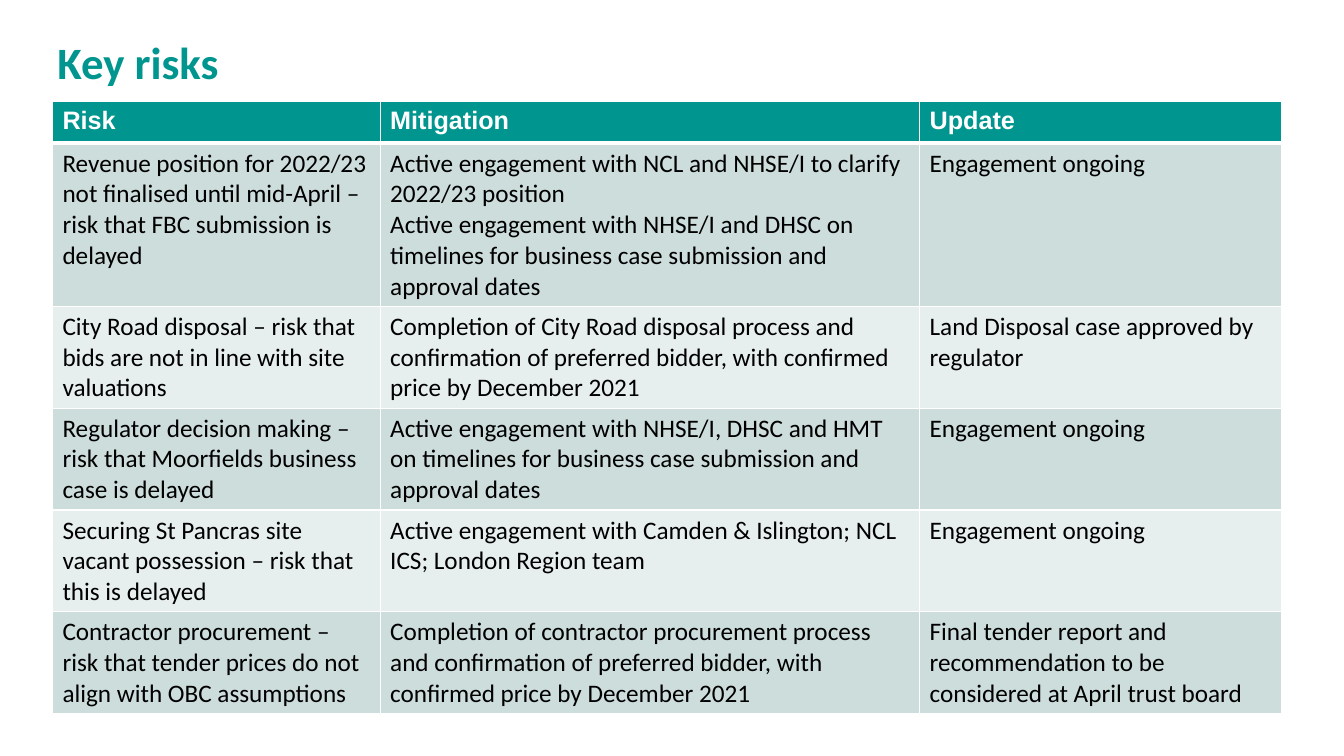
from lxml import etree
from pptx import Presentation
from pptx.dml.color import RGBColor
from pptx.enum.text import MSO_ANCHOR
from pptx.oxml.ns import qn
from pptx.util import Inches, Pt

MIDDLE = MSO_ANCHOR.MIDDLE
WIDTH, HEIGHT = 13.33, 7.5

HEADINGS = ["Risk", "Mitigation", "Update"]
# One row per risk; each cell is a list of paragraphs
RISKS = [
    [["Revenue position for 2022/23 not finalised until mid-April – risk that FBC submission is delayed"],
     ["Active engagement with NCL and NHSE/I to clarify 2022/23 position",
      "Active engagement with NHSE/I and DHSC on timelines for business case submission and approval dates"],
     ["Engagement ongoing"]],
    [["City Road disposal – risk that bids are not in line with site valuations"],
     ["Completion of City Road disposal process and confirmation of preferred bidder, "
      "with confirmed price by December 2021"],
     ["Land Disposal case approved by regulator"]],
    [["Regulator decision making – risk that Moorfields business case is delayed"],
     ["Active engagement with NHSE/I, DHSC and HMT on timelines for business case submission and approval dates"],
     ["Engagement ongoing"]],
    [["Securing St Pancras site vacant possession – risk that this is delayed"],
     ["Active engagement with Camden & Islington; NCL ICS; London Region team"],
     ["Engagement ongoing"]],
    [["Contractor procurement – risk that tender prices do not align with OBC assumptions"],
     ["Completion of contractor procurement process and confirmation of preferred bidder, "
      "with confirmed price by December 2021"],
     ["Final tender report and recommendation to be considered at April trust board"]],
]
COLUMN_WIDTHS = [3.25, 5.35, 3.59]
ROW_HEIGHTS = [0.41, 1.62] + [1.01] * 4


def colour(hex_code):
    return RGBColor.from_string(hex_code)


class RiskSlide:
    TEAL, WHITE, BLACK = "00968F", "FFFFFF", "000000"
    BANDS = ["CCDDDB", "E7EFEE"]
    HEADING_FONT, BODY_FONT = "Arial", "Calibri"
    TITLE_SIZE, TABLE_SIZE = 32, 18
    RULE, HEADING_RULE = 1, 3

    def __init__(self, deck):
        self.slide = deck.slides.add_slide(deck.slide_layouts[6])

    @staticmethod
    def place(left, top, width, height):
        """Turn shares of the slide into lengths."""
        return (Inches(left * WIDTH), Inches(top * HEIGHT),
                Inches(width * WIDTH), Inches(height * HEIGHT))

    def add_wording(self, frame, paragraphs, size, font, ink, bold):
        for index, wording in enumerate(paragraphs):
            paragraph = frame.add_paragraph() if index else frame.paragraphs[0]
            run = paragraph.add_run()
            run.text = wording
            run.font.size, run.font.name, run.font.bold = Pt(size), font, bold
            run.font.color.rgb = colour(ink)

    def title(self, wording, *shares):
        frame = self.slide.shapes.add_textbox(*self.place(*shares)).text_frame
        frame.word_wrap = True
        frame.vertical_anchor = MIDDLE
        frame.margin_left = 0
        self.add_wording(frame, [wording], self.TITLE_SIZE, self.BODY_FONT, self.TEAL, True)

    def borders(self, cell, top, bottom):
        properties = cell._tc.get_or_add_tcPr()
        for side, points in zip("LRTB", (self.RULE, self.RULE, top, bottom)):
            line = etree.SubElement(properties, qn(f"a:ln{side}"), w=str(Pt(points)))
            fill = etree.SubElement(line, qn("a:solidFill"))
            etree.SubElement(fill, qn("a:srgbClr"), val=self.WHITE)

    def cell(self, cell, paragraphs, row):
        heading = row == 0
        self.borders(cell,
                     top=self.HEADING_RULE if row == 1 else self.RULE,
                     bottom=self.HEADING_RULE if heading else self.RULE)
        cell.fill.solid()
        cell.fill.fore_color.rgb = colour(self.TEAL if heading else self.BANDS[(row - 1) % 2])
        font, ink = (self.HEADING_FONT, self.WHITE) if heading else (self.BODY_FONT, self.BLACK)
        self.add_wording(cell.text_frame, paragraphs, self.TABLE_SIZE, font, ink, heading)

    def table(self, rows, widths, heights, left, top):
        area = self.place(left, top, sum(widths) / WIDTH, sum(heights) / HEIGHT)
        grid = self.slide.shapes.add_table(len(rows), len(widths), *area).table
        for column, width in zip(grid.columns, widths):
            column.width = Inches(width)
        for index, (contents, height) in enumerate(zip(rows, heights)):
            grid.rows[index].height = Inches(height)
            for position, paragraphs in enumerate(contents):
                self.cell(grid.cell(index, position), paragraphs, index)


def main():
    deck = Presentation()
    deck.slide_width, deck.slide_height = Inches(WIDTH), Inches(HEIGHT)
    page = RiskSlide(deck)

    # Title
    page.title("Key risks", 0.57 / WIDTH, 0.05 / HEIGHT, 10.23 / WIDTH, 1.12 / HEIGHT)

    # Risk register
    heading_row = [[heading] for heading in HEADINGS]
    page.table([heading_row] + RISKS, COLUMN_WIDTHS, ROW_HEIGHTS,
               left=0.52 / WIDTH, top=1.01 / HEIGHT)

    deck.save("out.pptx")


if __name__ == "__main__":
    main()
